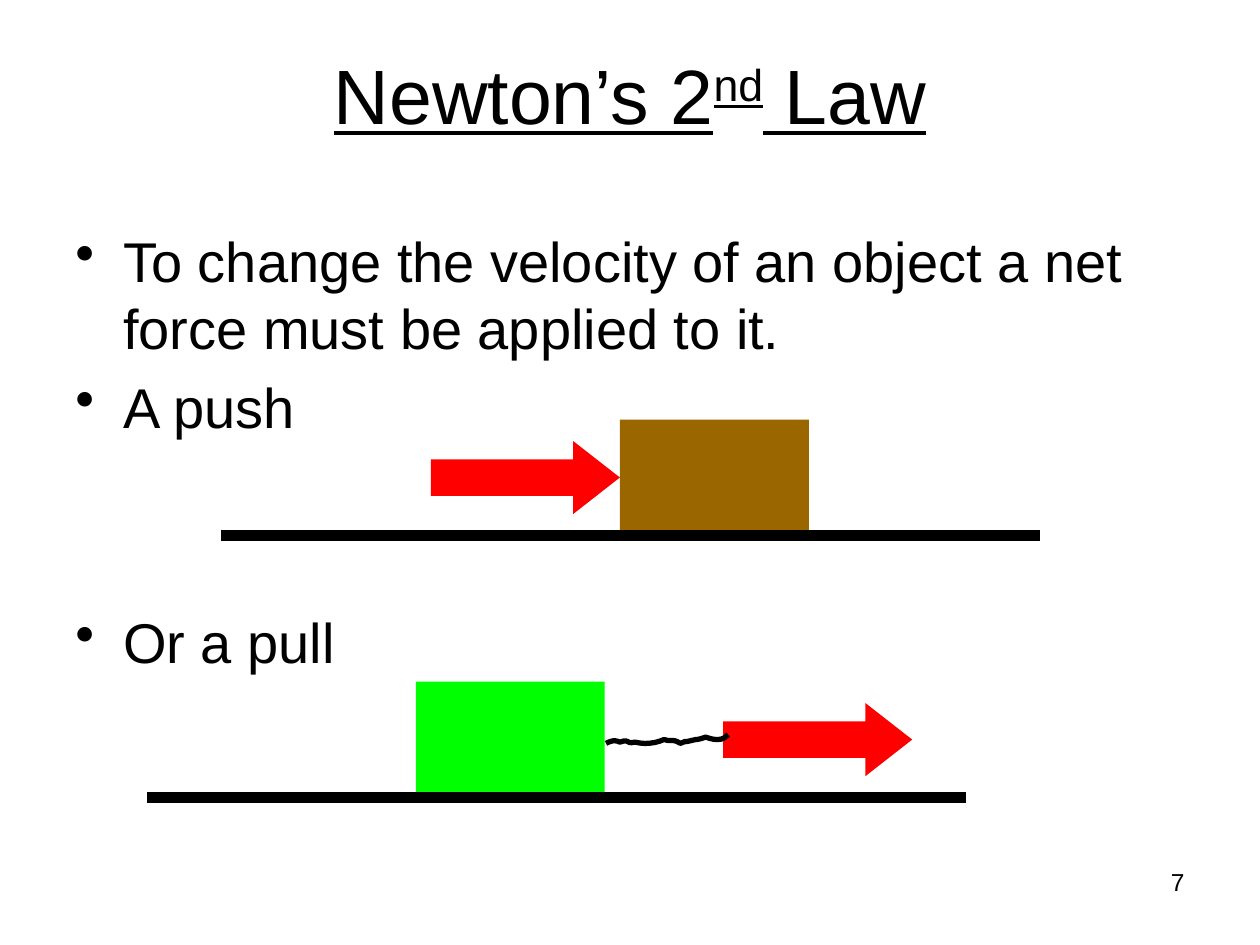
from lxml import etree
from pptx import Presentation
from pptx.dml.color import RGBColor
from pptx.enum.shapes import MSO_CONNECTOR, MSO_SHAPE
from pptx.enum.text import MSO_ANCHOR, PP_ALIGN
from pptx.oxml.ns import qn
from pptx.util import Inches, Pt

BLACK = RGBColor(0x00, 0x00, 0x00)
BROWN = RGBColor(0x99, 0x66, 0x00)
GREEN = RGBColor(0x00, 0xFF, 0x00)
RED = RGBColor(0xFF, 0x00, 0x00)
RECTANGLE, RIGHT_ARROW = MSO_SHAPE.RECTANGLE, MSO_SHAPE.RIGHT_ARROW
STRAIGHT = MSO_CONNECTOR.STRAIGHT
TOP, MIDDLE = MSO_ANCHOR.TOP, MSO_ANCHOR.MIDDLE
LEFT, CENTER, RIGHT = PP_ALIGN.LEFT, PP_ALIGN.CENTER, PP_ALIGN.RIGHT

GROUND_LENGTH = 6.5
BOX_WIDTH, BOX_HEIGHT = 1.5, 0.92
ARROW_WIDTH, ARROW_HEIGHT, ARROW_RISE = 1.5, 0.58, 0.75

# Two control points and an end point for each curve of the rope
ROPE_START = (4.81, 5.9)
ROPE_CURVES = [
    ((4.85, 5.88), (4.88, 5.87), (4.92, 5.89)),
    ((5.0, 5.86), (4.97, 5.91), (5.04, 5.89)),
    ((5.12, 5.91), (5.2, 5.9), (5.27, 5.87)),
    ((5.34, 5.89), (5.34, 5.86), (5.4, 5.9)),
    ((5.5, 5.86), (5.36, 5.91), (5.52, 5.87)),
    ((5.55, 5.87), (5.6, 5.85), (5.6, 5.85)),
    ((5.66, 5.87), (5.73, 5.89), (5.78, 5.83)),
]


def curve_points(start, curves, steps=6):
    """Points along a chain of cubic curves, without the start."""
    points = []
    for first, second, end in curves:
        for step in range(1, steps + 1):
            t = step / steps
            weights = ((1 - t) ** 3, 3 * t * (1 - t) ** 2, 3 * t * t * (1 - t), t ** 3)
            corners = (start, first, second, end)
            points.append(tuple(
                sum(weight * corner[axis] for weight, corner in zip(weights, corners))
                for axis in (0, 1)))
        start = end
    return points


class SlideBuilder:
    font_name = "Arial"
    text_color = BLACK
    bullet_indent = Inches(0.38)

    def __init__(self, slide):
        self.slide = slide

    def text_box(self, left, top, width, height, anchor=TOP):
        box = self.slide.shapes.add_textbox(
            Inches(left), Inches(top), Inches(width), Inches(height))
        box.text_frame.word_wrap = True
        box.text_frame.vertical_anchor = anchor
        return box.text_frame

    def style(self, paragraph, size, align=LEFT):
        paragraph.alignment = align
        paragraph.font.name = self.font_name
        paragraph.font.size = Pt(size)
        paragraph.font.color.rgb = self.text_color

    def title(self, before, superscript, after):
        paragraph = self.text_box(0.5, 0.12, 9, 1.25, MIDDLE).paragraphs[0]
        self.style(paragraph, 44, CENTER)
        paragraph.font.underline = True
        for text in (before, superscript, after):
            run = paragraph.add_run()
            run.text = text
            run.font.underline = True
            if text == superscript:
                run.font._element.set("baseline", "30000")

    def bullets(self, items):
        frame = self.text_box(0.5, 1.75, 9, 4.95)
        for index, (text, space_before) in enumerate(items):
            paragraph = frame.add_paragraph() if index else frame.paragraphs[0]
            paragraph.text = text
            self.style(paragraph, 32)
            paragraph.space_before = Pt(space_before)
            properties = paragraph._p.get_or_add_pPr()
            properties.set("marL", str(self.bullet_indent))
            properties.set("indent", str(-self.bullet_indent))
            bullet = etree.Element(qn("a:buChar"), char="•")
            properties.find(qn("a:defRPr")).addprevious(bullet)

    def page_number(self, text):
        paragraph = self.text_box(7.17, 6.83, 2.33, 0.52).paragraphs[0]
        paragraph.text = text
        self.style(paragraph, 14, RIGHT)

    def block(self, kind, left, top, width, height, color):
        shape = self.slide.shapes.add_shape(
            kind, Inches(left), Inches(top), Inches(width), Inches(height))
        shape.shadow.inherit = False
        shape.fill.solid()
        shape.fill.fore_color.rgb = color
        shape.line.fill.background()
        return shape

    def ground(self, left, top):
        line = self.slide.shapes.add_connector(
            STRAIGHT, Inches(left), Inches(top),
            Inches(left + GROUND_LENGTH), Inches(top))
        line.line.color.rgb = BLACK
        line.line.width = Pt(6)
        etree.SubElement(line._element.spPr, qn("a:effectLst"))

    def force_scene(self, ground_left, ground_top, box_left, box_color, arrow_left):
        self.block(RECTANGLE, box_left, ground_top - BOX_HEIGHT,
                   BOX_WIDTH, BOX_HEIGHT, box_color)
        self.ground(ground_left, ground_top)
        arrow = self.block(RIGHT_ARROW, arrow_left, ground_top - ARROW_RISE,
                           ARROW_WIDTH, ARROW_HEIGHT, RED)
        arrow.adjustments[0] = 0.5
        arrow.adjustments[1] = 0.64

    def rope(self, start, curves):
        points = [(Inches(x), Inches(y)) for x, y in curve_points(start, curves)]
        builder = self.slide.shapes.build_freeform(Inches(start[0]), Inches(start[1]))
        builder.add_line_segments(points, close=False)
        shape = builder.convert_to_shape()
        shape.shadow.inherit = False
        shape.fill.background()
        shape.line.color.rgb = BLACK
        shape.line.width = Pt(3)


def main():
    presentation = Presentation()
    presentation.slide_width, presentation.slide_height = Inches(10), Inches(7.5)
    slide = presentation.slides.add_slide(presentation.slide_layouts[6])
    builder = SlideBuilder(slide)

    # Text
    builder.title("Newton’s 2", "nd", " Law")
    builder.bullets([
        ("To change the velocity of an object a net force must be applied to it.", 6.4),
        ("A push", 6.4),
        ("Or a pull", 96),
    ])

    # Push: the arrow meets the box
    builder.force_scene(1.75, 4.25, 4.92, BROWN, 3.42)

    # Pull: a rope joins the box to the arrow
    builder.force_scene(1.17, 6.33, 3.3, GREEN, 5.74)
    builder.rope(ROPE_START, ROPE_CURVES)

    builder.page_number("7")
    presentation.save("out.pptx")


if __name__ == "__main__":
    main()
